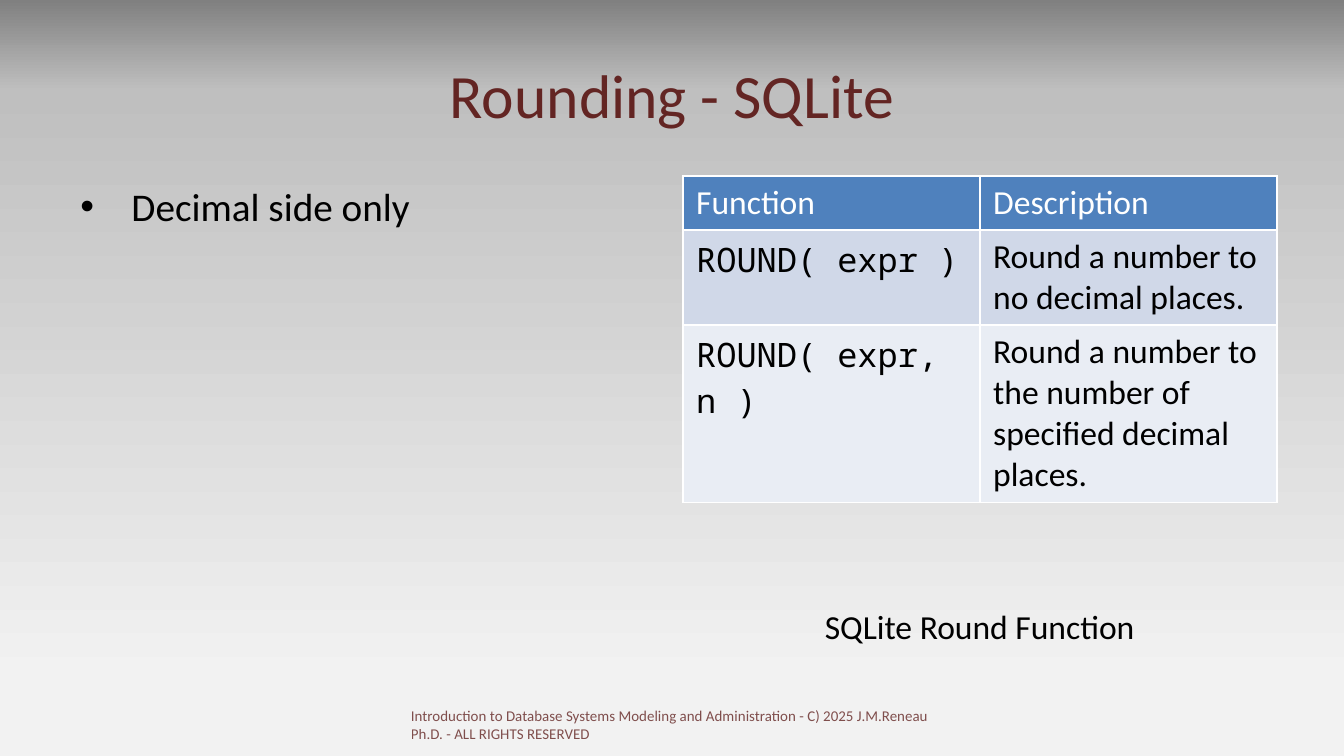
import pptx
import pptx.dml.color
import pptx.enum.text
import pptx.oxml
import pptx.oxml.ns
import pptx.util
from lxml import etree

Inches, Pt = pptx.util.Inches, pptx.util.Pt
ALIGN = pptx.enum.text.PP_ALIGN
ANCHOR = pptx.enum.text.MSO_ANCHOR
qn = pptx.oxml.ns.qn

COLORS = {
    "title": "632523", "text": "000000", "white": "FFFFFF",
    "header": "4F81BD", "band_dark": "D0D8E8", "band_light": "E9EDF4",
}
BACKGROUND = [(0, "808080"), (12, "BFBFBF"), (90, "F2F2F2")]
SANS, MONO = "Calibri", "Noto Sans Mono"

# A 16:9 slide with two equal columns between the side margins
SLIDE_W = 10
SLIDE_H = SLIDE_W * 9 / 16
MARGIN, GAP = 0.5, 0.16
COL_W = (SLIDE_W - 2 * MARGIN - GAP) / 2
COL_X = [MARGIN, MARGIN + COL_W + GAP]
BODY_Y, BODY_H = 1.31, 3.71
CAPTION_H = 0.56

ROWS = [
    ("Function", "Description"),
    ("ROUND( expr )", "Round a number to no decimal places."),
    ("ROUND( expr, n )",
     "Round a number to the number of specified decimal places."),
]
ROW_HEIGHTS = [0.4, 0.71, 1.32]
ROW_FILLS = ["header", "band_dark", "band_light"]


def rgb(name):
    return pptx.dml.color.RGBColor.from_string(COLORS[name])


def set_text(tf, text, size=18, font=SANS, color="text", align=ALIGN.LEFT,
             anchor=None, alpha=None):
    """Write one formatted paragraph and return it."""
    tf.word_wrap = True
    if anchor is not None:
        tf.vertical_anchor = anchor
    p = tf.paragraphs[0]
    p.alignment = align
    r = p.add_run()
    r.text = text
    r.font.size = Pt(size)
    r.font.name = font
    r.font.color.rgb = rgb(color)
    if alpha is not None:
        clr = r._r.rPr.find(".//" + qn("a:srgbClr"))
        etree.SubElement(clr, qn("a:alpha"), val=str(alpha * 1000))
    return p


def add_text(s, x, y, w, h, text, **fmt):
    box = s.shapes.add_textbox(Inches(x), Inches(y), Inches(w), Inches(h))
    return set_text(box.text_frame, text, **fmt)


def add_bullet(p, indent):
    pPr = p._p.get_or_add_pPr()
    pPr.set("marL", str(Inches(indent)))
    pPr.set("indent", str(-Inches(indent)))
    etree.SubElement(pPr, qn("a:buFont"), typeface="Arial")
    etree.SubElement(pPr, qn("a:buChar"), char="•")


def set_background(s):
    fill = s.background.fill
    fill.gradient()
    fill.gradient_angle = 270
    stops = s._element.find(".//" + qn("a:gsLst"))
    for stop in list(stops):
        stops.remove(stop)
    for pos, color in BACKGROUND:
        gs = etree.SubElement(stops, qn("a:gs"), pos=str(pos * 1000))
        etree.SubElement(gs, qn("a:srgbClr"), val=color)


def set_borders(cell):
    tcPr = cell._tc.get_or_add_tcPr()
    for side in "LRTB":
        ln = etree.SubElement(tcPr, qn("a:ln" + side), w=str(Pt(1)))
        fill = etree.SubElement(ln, qn("a:solidFill"))
        etree.SubElement(fill, qn("a:srgbClr"), val=COLORS["white"])


def add_function_table(s):
    frame = s.shapes.add_table(
        len(ROWS), 2, Inches(COL_X[1]), Inches(BODY_Y),
        Inches(COL_W), Inches(sum(ROW_HEIGHTS)))
    table = frame.table
    for i, texts in enumerate(ROWS):
        table.rows[i].height = Inches(ROW_HEIGHTS[i])
        header = i == 0
        for j, text in enumerate(texts):
            cell = table.cell(i, j)
            set_borders(cell)
            cell.fill.solid()
            cell.fill.fore_color.rgb = rgb(ROW_FILLS[i])
            p = set_text(cell.text_frame, text,
                         font=MONO if j == 0 and not header else SANS,
                         color="white" if header else "text")
            p.runs[0].font.bold = False


def add_title(s, text):
    title = s.shapes.title
    title.left, title.top = Inches(MARGIN), Inches(0.23)
    title.width, title.height = Inches(SLIDE_W - 2 * MARGIN), Inches(0.94)
    set_text(title.text_frame, text, size=33, color="title",
             align=ALIGN.CENTER, anchor=ANCHOR.MIDDLE)


def main():
    prs = pptx.Presentation()
    prs.slide_width, prs.slide_height = Inches(SLIDE_W), Inches(SLIDE_H)
    s = prs.slides.add_slide(prs.slide_layouts[5])
    set_background(s)
    add_title(s, "Rounding - SQLite")

    p = add_text(s, COL_X[0], BODY_Y, COL_W, BODY_H, "Decimal side only",
                 size=21)
    p.space_before = Pt(4)
    add_bullet(p, 0.38)

    add_function_table(s)
    add_text(s, COL_X[1], BODY_Y + BODY_H - CAPTION_H, COL_W, CAPTION_H,
             "SQLite Round Function", align=ALIGN.CENTER)
    add_text(s, 2.96, 5.21, 4.06, 0.3,
             "Introduction to Database Systems Modeling and Administration"
             " - C) 2025 J.M.Reneau Ph.D. - ALL RIGHTS RESERVED",
             size=8, color="title", alpha=80)
    prs.save("out.pptx")


if __name__ == "__main__":
    main()
